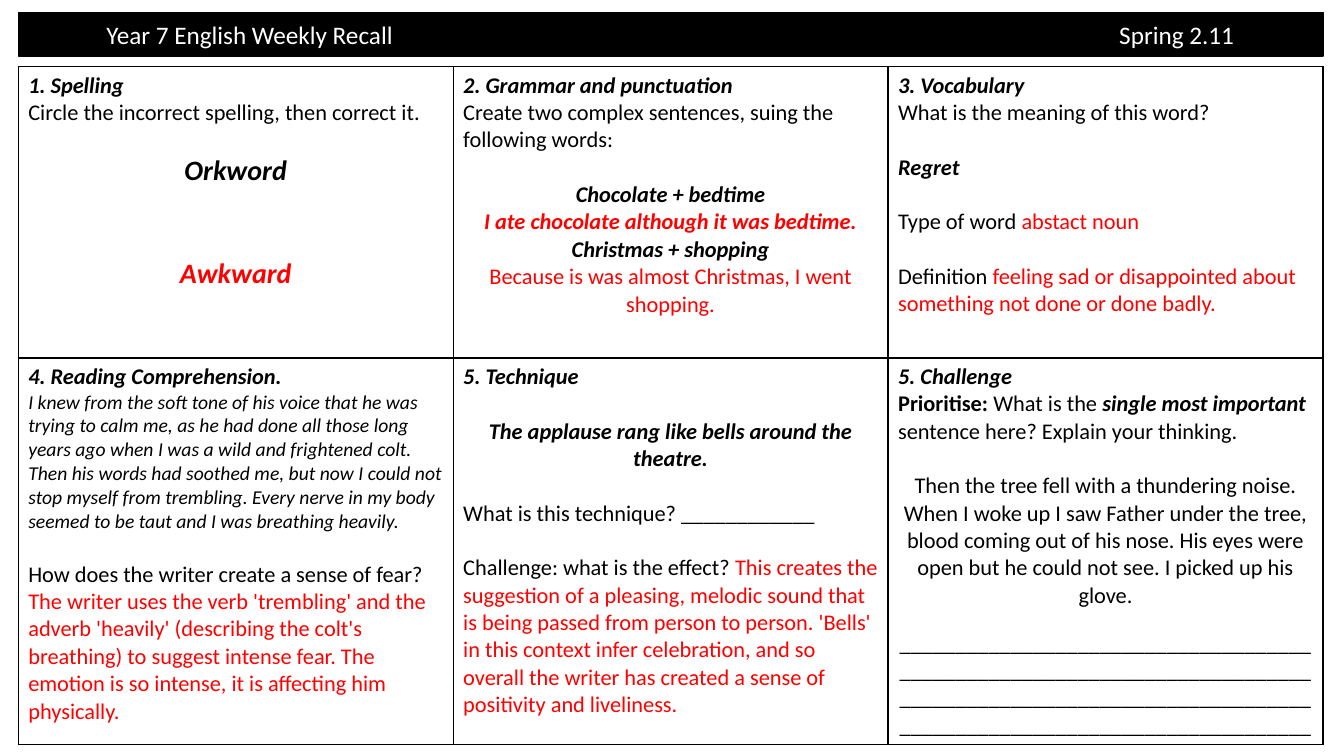
from lxml import etree
from pptx import Presentation
from pptx.dml.color import RGBColor
from pptx.enum.text import MSO_ANCHOR, MSO_AUTO_SIZE, PP_ALIGN
from pptx.oxml.ns import qn
from pptx.util import Cm, Pt

LEFT, CENTER = PP_ALIGN.LEFT, PP_ALIGN.CENTER
MIDDLE = MSO_ANCHOR.MIDDLE
NO_FIT = MSO_AUTO_SIZE.NONE
TITLE_ONLY = 5

BLACK = RGBColor(0, 0, 0)
WHITE = RGBColor(255, 255, 255)
RED = RGBColor(255, 0, 0)
FONT = "Calibri"
LINE = 19.5  # points: height of one 16 pt line

STRONG = {"bold": True, "italic": True}
ANSWER = {"color": RED}


def para(*runs, align=LEFT, before=0, **style):
    """Describe a paragraph; each run is a string or a (string, format) pair."""
    pairs = [(run, {}) if isinstance(run, str) else run for run in runs]
    return {"runs": [(text, {**style, **own}) for text, own in pairs],
            "align": align, "before": before}


def write_run(paragraph, text, size=16, bold=False, italic=False, color=BLACK):
    run = paragraph.add_run()
    run.text = text
    font = run.font
    font.name, font.size, font.bold, font.italic = FONT, Pt(size), bold, italic
    font.color.rgb = color


SPELLING = [
    para("1. Spelling", **STRONG),
    para("Circle the incorrect spelling, then correct it."),
    para("Orkword", align=CENTER, before=LINE, size=20, **STRONG),
    para("Awkward", align=CENTER, before=49, size=20, **STRONG, **ANSWER),
]
GRAMMAR = [
    para("2. Grammar and punctuation", **STRONG),
    para("Create two complex sentences, suing the following words:"),
    para("Chocolate + bedtime", align=CENTER, before=LINE, **STRONG),
    para("I ate chocolate although it was bedtime.", align=CENTER, **STRONG, **ANSWER),
    para("Christmas + shopping", align=CENTER, **STRONG),
    para("Because is was almost Christmas, I went shopping.", align=CENTER, **ANSWER),
]
VOCABULARY = [
    para("3. Vocabulary", **STRONG),
    para("What is the meaning of this word?"),
    para("Regret", before=LINE, **STRONG),
    para("Type of word ", ("abstact noun", ANSWER), before=LINE),
    para("Definition", (" feeling sad or disappointed about something not done "
                        "or done badly.", ANSWER), before=LINE),
]
READING = [
    para("4. Reading Comprehension.", **STRONG),
    para("I knew from the soft tone of his voice that he was trying to calm me, as he "
         "had done all those long years ago when I was a wild and frightened colt. "
         "Then his words had soothed me, but now I could not stop myself from "
         "trembling. Every nerve in my body seemed to be taut and I was breathing "
         "heavily.", size=14, italic=True),
    para("How does the writer create a sense of fear?", before=LINE),
    para("The writer uses the verb 'trembling' and the adverb 'heavily' (describing "
         "the colt's breathing) to suggest intense fear. The emotion is so intense, "
         "it is affecting him physically.", **ANSWER),
]
TECHNIQUE = [
    para("5. Technique", **STRONG),
    para("The applause rang like bells around the theatre.",
         align=CENTER, before=LINE, **STRONG),
    para("What is this technique? " + "_" * 12, before=LINE),
    para("Challenge: what is the effect?",
         (" This creates the suggestion of a pleasing, melodic sound that is being "
          "passed from person to person. 'Bells' in this context infer celebration, "
          "and so overall the writer has created a sense of positivity and "
          "liveliness.", ANSWER), before=LINE),
]
CHALLENGE = [
    para("5. Challenge", **STRONG),
    para(("Prioritise: ", {"bold": True}), "What is the ",
         ("single most important ", STRONG), "sentence here? Explain your thinking."),
    para("Then the tree fell with a thundering noise. When I woke up I saw Father "
         "under the tree, blood coming out of his nose. His eyes were open but he "
         "could not see. I picked up his glove.", align=CENTER, before=LINE),
    para("_" * 148, align=CENTER, before=14.6),
]
TASKS = [[SPELLING, GRAMMAR, VOCABULARY], [READING, TECHNIQUE, CHALLENGE]]


class RecallSheet:
    """Holds the slide and the shared left edge and width of its blocks."""

    left, width = Cm(0.46), Cm(32.88)

    def __init__(self, deck):
        self.slide = deck.slides.add_slide(deck.slide_layouts[TITLE_ONLY])

    def banner(self, subject, week):
        """Format the title as a black bar with a right-aligned tab for the week."""
        title = self.slide.shapes.title
        title.left, title.top = self.left, Cm(0.31)
        title.width, title.height = self.width, Cm(1.1)
        title.fill.solid()
        title.fill.fore_color.rgb = BLACK
        title.line.color.rgb = BLACK
        title.line.width = Pt(1)
        frame = title.text_frame
        frame.auto_size, frame.vertical_anchor = NO_FIT, MIDDLE
        frame.margin_left, frame.margin_right = Cm(2.22), 0
        frame.margin_top = frame.margin_bottom = 0
        heading = frame.paragraphs[0]
        heading.alignment = LEFT
        tabs = etree.SubElement(heading._p.get_or_add_pPr(), qn("a:tabLst"))
        etree.SubElement(tabs, qn("a:tab"), pos=str(Cm(28.42)), algn="r")
        write_run(heading, f"{subject}\t{week}", size=18, color=WHITE)

    def task_table(self, tasks, heights):
        columns = len(tasks[0])
        table = self.slide.shapes.add_table(
            len(tasks), columns, self.left, Cm(1.68), self.width, sum(heights)).table
        table.first_row = table.horz_banding = False
        for column in table.columns:
            column.width = self.width // columns
        for r, (row_tasks, height) in enumerate(zip(tasks, heights)):
            table.rows[r].height = height
            for c, task in enumerate(row_tasks):
                self.task_cell(table.cell(r, c), task)

    def task_cell(self, cell, task):
        cell.fill.background()
        self.border(cell)
        frame = cell.text_frame
        for i, content in enumerate(task):
            paragraph = frame.add_paragraph() if i else frame.paragraphs[0]
            paragraph.alignment = content["align"]
            paragraph.space_before = Pt(content["before"])
            for text, style in content["runs"]:
                write_run(paragraph, text, **style)

    def border(self, cell):
        properties = cell._tc.get_or_add_tcPr()
        for i, side in enumerate(("lnL", "lnR", "lnT", "lnB")):
            edge = etree.Element(qn(f"a:{side}"), w=str(Pt(1)))
            fill = etree.SubElement(edge, qn("a:solidFill"))
            etree.SubElement(fill, qn("a:srgbClr"), val=str(BLACK))
            properties.insert(i, edge)


def main():
    deck = Presentation()
    deck.slide_width, deck.slide_height = Cm(33.87), Cm(19.05)
    sheet = RecallSheet(deck)
    sheet.banner("Year 7 English Weekly Recall", "Spring 2.11")
    sheet.task_table(TASKS, heights=[Cm(7.34), Cm(9.47)])
    deck.save("out.pptx")


if __name__ == "__main__":
    main()
